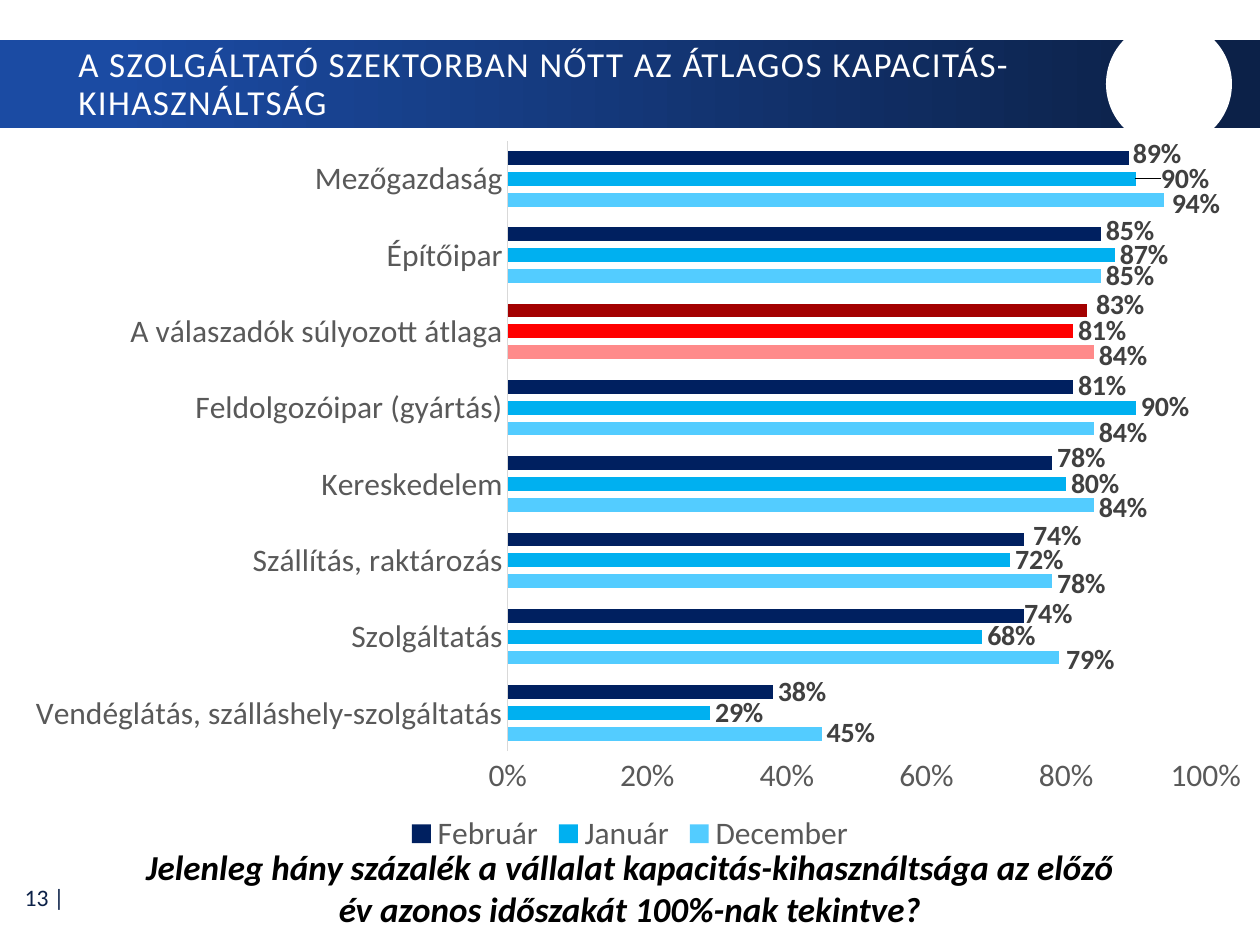
from dataclasses import dataclass

from lxml import etree
from pptx import Presentation
from pptx.chart.data import CategoryChartData
from pptx.dml.color import RGBColor
from pptx.enum.chart import XL_CHART_TYPE, XL_LABEL_POSITION, XL_LEGEND_POSITION, XL_TICK_MARK
from pptx.enum.shapes import MSO_SHAPE
from pptx.enum.text import MSO_ANCHOR, MSO_AUTO_SIZE, PP_ALIGN
from pptx.oxml.ns import qn
from pptx.util import Emu, Pt

TITLE = "A SZOLGÁLTATÓ SZEKTORBAN NŐTT AZ ÁTLAGOS KAPACITÁS-KIHASZNÁLTSÁG"
QUESTION = ("Jelenleg hány százalék a vállalat kapacitás-kihasználtsága "
            "az előző év azonos időszakát 100%-nak tekintve?")
PAGE_NUMBER = "13 |"

CATEGORIES = [
    "Vendéglátás, szálláshely-szolgáltatás", "Szolgáltatás", "Szállítás, raktározás",
    "Kereskedelem", "Feldolgozóipar (gyártás)", "A válaszadók súlyozott átlaga",
    "Építőipar", "Mezőgazdaság",
]
AVERAGE_INDEX = CATEGORIES.index("A válaszadók súlyozott átlaga")
SERIES = [
    {"name": "December", "color": "53CCFF", "average": "FF8A8A",
     "values": [0.45, 0.79, 0.78, 0.84, 0.84, 0.84, 0.85, 0.94],
     "label_shifts": {1: (2, 3), 2: (0, 3), 3: (0, 4), 4: (0, 5), 5: (0, 4), 7: (3, 5)}},
    {"name": "Január", "color": "00B0F0", "average": "FF0000",
     "values": [0.29, 0.68, 0.72, 0.80, 0.90, 0.81, 0.87, 0.90],
     "label_shifts": {7: (20, 1)}},
    {"name": "Február", "color": "002060", "average": "A30000",
     "values": [0.38, 0.74, 0.74, 0.78, 0.81, 0.83, 0.85, 0.89],
     "label_shifts": {1: (-5, -2), 2: (4, -3), 3: (0, -5), 4: (0, -1),
                      5: (4, -5), 6: (0, -3), 7: (-1, -4)}},
]

SLIDE_SIZE = (1260, 945)
BAND = (0, 40, 1260, 88)
CIRCLE = (1106, 21, 126, 126)
TITLE_BOX = (66, 43, 1048, 84)
CHART_BOX = (0, 137, 1260, 722)
QUESTION_BOX = (122, 839, 1016, 97)
NUMBER_BOX = (1, 874, 76, 47)
PLOT_LAYOUT = {"x": 0.403, "y": 0, "w": 0.554, "h": 0.85}


@dataclass(frozen=True)
class Theme:
    font: str = "Calibri"
    white: str = "FFFFFF"
    black: str = "000000"
    blue: str = "1B4BA3"
    navy: str = "0C2148"
    axis_text: str = "595959"
    label_text: str = "404040"
    axis_line: str = "D9D9D9"
    heading_size: float = 20
    axis_size: float = 18
    label_size: float = 16
    number_size: float = 13.5


THEME = Theme()


def px(value):
    return Emu(round(value * 914400 / 126))


def place(box):
    return [px(value) for value in box]


def rgb(color):
    return RGBColor.from_string(color)


def style(font, size, color, bold=False, italic=False):
    font.name, font.size = THEME.font, Pt(size)
    font.bold, font.italic = bold, italic
    font.color.rgb = rgb(color)


def add_shape(slide, kind, box):
    shape = slide.shapes.add_shape(kind, *place(box))
    shape.shadow.inherit = False
    shape.line.fill.background()
    return shape


def add_text(slide, box, text, size, color, align, anchor=MSO_ANCHOR.MIDDLE, **emphasis):
    text_frame = slide.shapes.add_textbox(*place(box)).text_frame
    text_frame.word_wrap = True
    text_frame.vertical_anchor = anchor
    text_frame.text = text
    paragraph = text_frame.paragraphs[0]
    paragraph.alignment = align
    style(paragraph.runs[0].font, size, color, **emphasis)
    return text_frame


def manual_layout(**settings):
    layout = etree.Element(qn("c:layout"))
    manual = etree.SubElement(layout, qn("c:manualLayout"))
    for tag, value in settings.items():
        etree.SubElement(manual, qn(f"c:{tag}")).set("val", str(value))
    return layout


def style_labels(labels):
    style(labels.font, THEME.label_size, THEME.label_text, bold=True)
    labels.position = XL_LABEL_POSITION.OUTSIDE_END


def format_series(series, data):
    series.format.fill.solid()
    series.format.fill.fore_color.rgb = rgb(data["color"])
    average_fill = series.points[AVERAGE_INDEX].format.fill
    average_fill.solid()
    average_fill.fore_color.rgb = rgb(data["average"])
    labels = series.data_labels
    labels.show_value = True
    labels.number_format, labels.number_format_is_linked = "0%", False
    style_labels(labels)
    for index, (shift_x, shift_y) in data["label_shifts"].items():
        style_labels(series.points[index].data_label)
        layout = manual_layout(x=round(shift_x / CHART_BOX[2], 4),
                               y=round(shift_y / CHART_BOX[3], 4))
        element = labels._element.xpath(f"c:dLbl[c:idx/@val='{index}']")[0]
        element.find(qn("c:idx")).addnext(layout)


def add_capacity_chart(slide):
    chart_data = CategoryChartData(number_format="0%")
    chart_data.categories = CATEGORIES
    for data in SERIES:
        chart_data.add_series(data["name"], data["values"])
    chart = slide.shapes.add_chart(
        XL_CHART_TYPE.BAR_CLUSTERED, *place(CHART_BOX), chart_data).chart
    style(chart.font, THEME.axis_size, THEME.black)
    chart.has_title = False
    chart.has_legend = True
    chart.legend.position = XL_LEGEND_POSITION.BOTTOM
    chart.legend.include_in_layout = False
    style(chart.legend.font, THEME.axis_size, THEME.axis_text)

    for axis in (chart.category_axis, chart.value_axis):
        axis.has_major_gridlines = False
        axis.major_tick_mark = axis.minor_tick_mark = XL_TICK_MARK.NONE
        style(axis.tick_labels.font, THEME.axis_size, THEME.axis_text)
    category_line = chart.category_axis.format.line
    category_line.color.rgb, category_line.width = rgb(THEME.axis_line), Pt(0.75)
    value_axis = chart.value_axis
    value_axis.format.line.fill.background()
    value_axis.minimum_scale, value_axis.maximum_scale, value_axis.major_unit = 0, 1, 0.2
    value_axis.tick_labels.number_format = "0%"
    value_axis.tick_labels.number_format_is_linked = False

    plot = chart.plots[0]
    plot.gap_width, plot.overlap, plot.vary_by_categories = 150, -50, False
    for series, data in zip(plot.series, SERIES):
        format_series(series, data)
    plot_area = chart._chartSpace.chart.plotArea
    for layout in plot_area.findall(qn("c:layout")):
        plot_area.remove(layout)
    plot_area.insert(0, manual_layout(
        layoutTarget="inner", xMode="edge", yMode="edge", **PLOT_LAYOUT))


def main():
    presentation = Presentation()
    presentation.slide_width, presentation.slide_height = place(SLIDE_SIZE)
    slide = presentation.slides.add_slide(presentation.slide_layouts[6])

    add_text(slide, NUMBER_BOX, PAGE_NUMBER, THEME.number_size, THEME.navy, PP_ALIGN.RIGHT)
    band = add_shape(slide, MSO_SHAPE.RECTANGLE, BAND)
    band.fill.gradient()
    band.fill.gradient_angle = 0
    stops = [(0.09, THEME.blue), (0.95, THEME.navy)]
    for stop, (position, color) in zip(band.fill.gradient_stops, stops):
        stop.position, stop.color.rgb = position, rgb(color)
    circle = add_shape(slide, MSO_SHAPE.OVAL, CIRCLE)
    circle.fill.solid()
    circle.fill.fore_color.rgb = rgb(THEME.white)

    title = add_text(slide, TITLE_BOX, TITLE, THEME.heading_size, THEME.white, PP_ALIGN.LEFT)
    title.paragraphs[0].line_spacing = 0.9
    title.paragraphs[0].runs[0].font._element.set("spc", "80")
    question = add_text(slide, QUESTION_BOX, QUESTION, THEME.heading_size, THEME.black,
                        PP_ALIGN.CENTER, MSO_ANCHOR.TOP, bold=True, italic=True)
    question.auto_size = MSO_AUTO_SIZE.SHAPE_TO_FIT_TEXT
    add_capacity_chart(slide)
    presentation.save("out.pptx")


if __name__ == "__main__":
    main()
